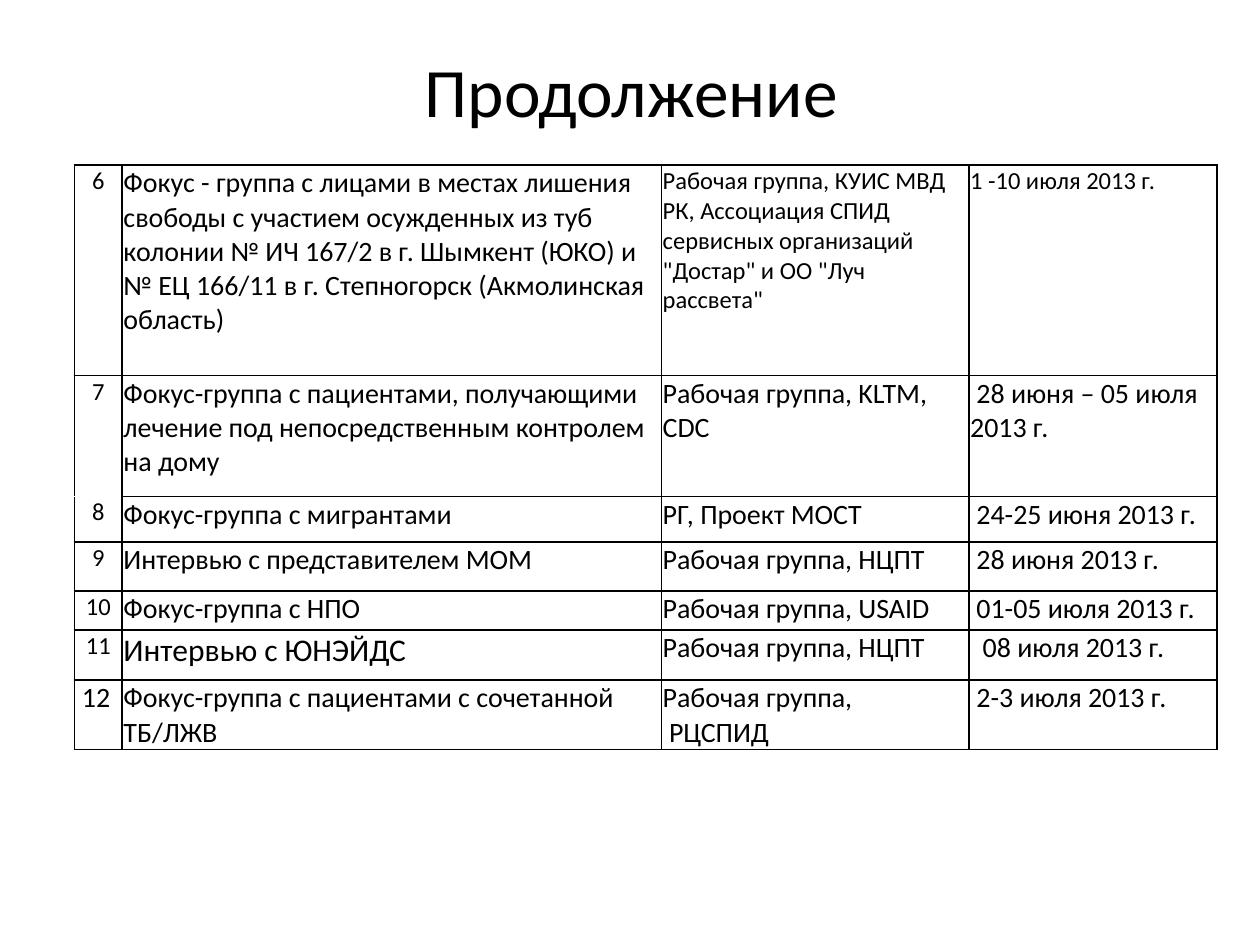
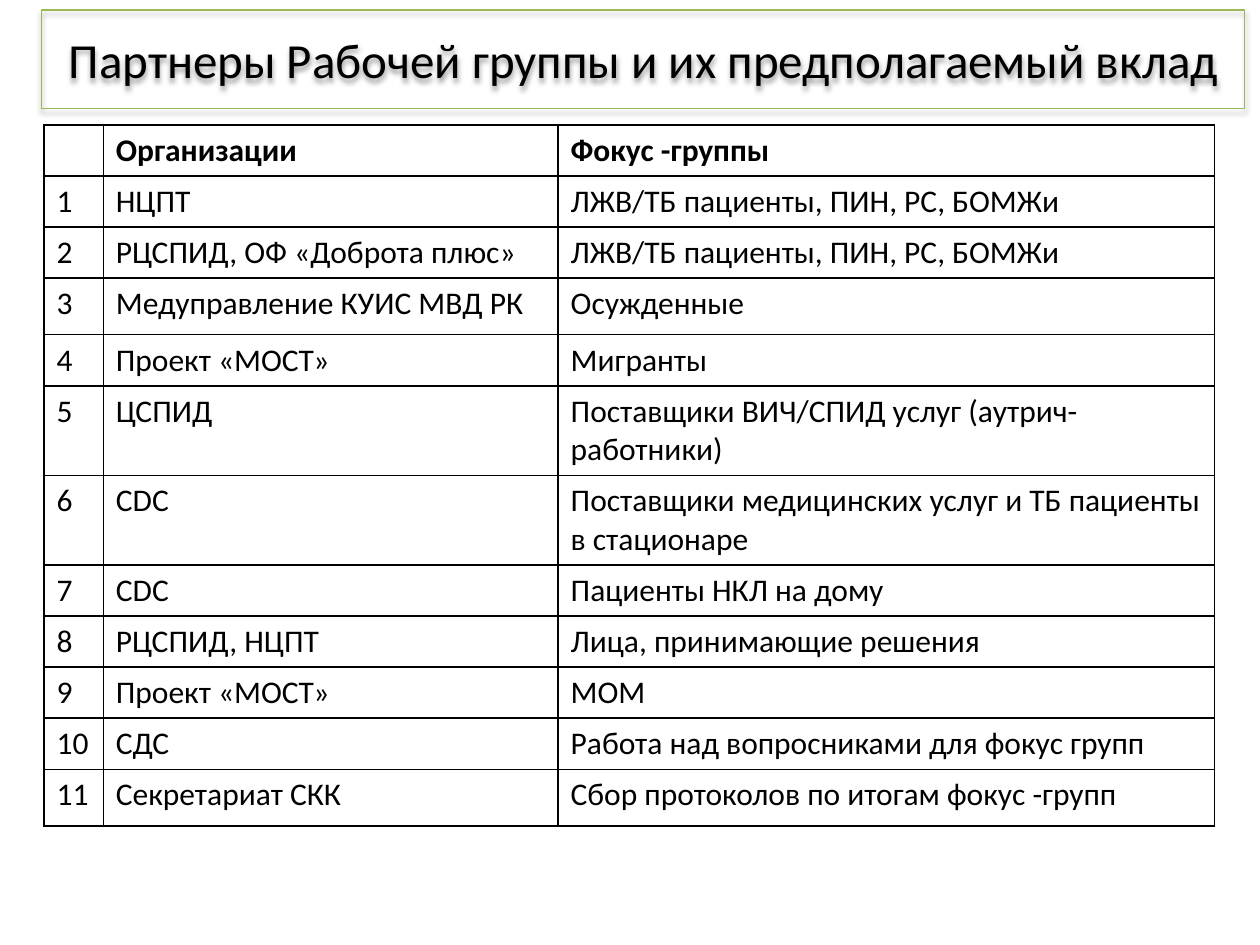
import pptx
import pptx.util
import pptx.dml.color
import pptx.enum.text
import pptx.oxml
import pptx.oxml.ns

RGBColor = pptx.dml.color.RGBColor
BLACK = RGBColor(0x00, 0x00, 0x00)
WHITE = RGBColor(0xFF, 0xFF, 0xFF)
GREEN = RGBColor(0x98, 0xB9, 0x55)
ALIGN = pptx.enum.text.PP_ALIGN
SPACE = pptx.oxml.ns.nsdecls("a")
SIDES = "LRTB"


class Deck:
    font = {"name": "Calibri", "bold": False}

    def __init__(self):
        self.file = pptx.Presentation()
        self.file.slide_width = pptx.util.Inches(10)
        self.file.slide_height = pptx.util.Inches(7.5)
        self.slide = None

    def across(self, share):
        return round(self.file.slide_width * share / 100)

    def down(self, share):
        return round(self.file.slide_height * share / 100)

    def place(self, left, top, width, height):
        return self.across(left), self.down(top), self.across(width), self.down(height)

    def add(self):
        self.slide = self.file.slides.add_slide(self.file.slide_layouts[5])

    def style(self, frame, size, align, **more):
        for para in frame.paragraphs:
            para.alignment = align
            form = {**self.font, "size": pptx.util.Pt(size), **more}
            for part in para.runs:
                for key, value in form.items():
                    setattr(part.font, key, value)
                part.font.color.rgb = BLACK

    def title(self, text, box, size):
        shape = self.slide.shapes.title
        for key, value in zip(("left", "top", "width", "height"), self.place(*box)):
            setattr(shape, key, value)
        frame = shape.text_frame
        frame.text = text
        form = {"word_wrap": True,
                "auto_size": pptx.enum.text.MSO_AUTO_SIZE.NONE,
                "vertical_anchor": pptx.enum.text.MSO_ANCHOR.MIDDLE}
        for key, value in form.items():
            setattr(frame, key, value)
        self.style(frame, size, ALIGN.CENTER)
        return shape

    def frame(self, shape):
        shape.fill.background()
        shape.line.color.rgb = GREEN
        shape.line.width = pptx.util.Pt(0.75)
        shape.element.spPr.append(pptx.oxml.parse_xml(
            f'<a:effectLst {SPACE}><a:outerShdw blurRad="40000" dist="20000" '
            f'dir="5400000" rotWithShape="0"><a:srgbClr val="{BLACK}">'
            '<a:alpha val="38000"/></a:srgbClr></a:outerShdw></a:effectLst>'))

    def edge(self, cell, tints):
        props = cell._tc.get_or_add_tcPr()
        for spot, side in enumerate(SIDES):
            props.insert(spot, pptx.oxml.parse_xml(
                f'<a:ln{side} {SPACE} w="12700"><a:solidFill>'
                f'<a:srgbClr val="{tints.get(side, BLACK)}"/></a:solidFill></a:ln{side}>'))

    def table(self, rows, spot, wide, high, pads, look, tints):
        box = self.place(*spot, sum(wide), sum(high))
        grid = self.slide.shapes.add_table(len(high), len(wide), *box).table
        grid.first_row = grid.horz_banding = False
        for col, share in zip(grid.columns, wide):
            col.width = self.across(share)
        for line, share in zip(grid.rows, high):
            line.height = self.down(share)
        side, top, base = pads
        form = {"margin_left": self.across(side), "margin_right": self.across(side),
                "margin_top": self.down(top), "margin_bottom": self.down(base)}
        for r, row in enumerate(rows):
            for c, text in enumerate(row):
                cell = grid.cell(r, c)
                cell.text = text
                for key, value in form.items():
                    setattr(cell, key, value)
                cell.fill.solid()
                cell.fill.fore_color.rgb = WHITE
                self.style(cell.text_frame, **look(r, c))
                self.edge(cell, tints.get((r, c), {}))
        return grid


TASKS = [
    ("6", "Фокус - группа с лицами в местах лишения свободы с участием осужденных "
     "из туб колонии № ИЧ 167/2 в г. Шымкент (ЮКО) и № ЕЦ 166/11 в г. Степногорск "
     "(Акмолинская область)",
     'Рабочая группа, КУИС МВД РК, Ассоциация СПИД сервисных организаций "Достар" '
     'и ОО "Луч рассвета"', "1 -10 июля 2013 г."),
    ("7", "Фокус-группа с пациентами, получающими лечение под непосредственным "
     "контролем на дому", "Рабочая группа, KLTM, CDC", " 28 июня – 05 июля 2013 г."),
    ("8", "Фокус-группа с мигрантами", "РГ, Проект МОСТ", " 24-25 июня 2013 г."),
    ("9", "Интервью с представителем МОМ", "Рабочая группа, НЦПТ", " 28 июня 2013 г."),
    ("10", "Фокус-группа с НПО", "Рабочая группа, USAID", " 01-05 июля 2013 г."),
    ("11", "Интервью с ЮНЭЙДС", "Рабочая группа, НЦПТ", " 08 июля 2013 г."),
    (" 12", "Фокус-группа с пациентами с сочетанной ТБ/ЛЖВ",
     "Рабочая группа,\n РЦСПИД", " 2-3 июля 2013 г."),
]

GROUPS = [
    ("Организации", "Фокус -группы"),
    ("НЦПТ", "ЛЖВ/ТБ пациенты, ПИН, РС, БОМЖи"),
    ("РЦСПИД, ОФ «Доброта плюс»", "ЛЖВ/ТБ пациенты, ПИН, РС, БОМЖи"),
    ("Медуправление КУИС МВД РК", "Осужденные"),
    ("Проект «МОСТ»", "Мигранты"),
    ("ЦСПИД", "Поставщики ВИЧ/СПИД услуг (аутрич-работники)"),
    ("CDC", "Поставщики медицинских услуг и ТБ пациенты в стационаре"),
    ("CDC", "Пациенты НКЛ на дому"),
    ("РЦСПИД, НЦПТ", "Лица, принимающие решения"),
    ("Проект «МОСТ»", "МОМ"),
    ("СДС", "Работа над вопросниками для фокус групп"),
    ("Секретариат СКК", "Сбор протоколов по итогам фокус -групп"),
]


def task_look(r, c):
    last = len(TASKS) - 1
    small = (c == 0 and r < last) or (r == 0 and c > 1)
    size = 14 if small else 18 if (r, c) == (5, 1) else 16
    return {"size": size, "align": ALIGN.CENTER if c == 0 and r < last else ALIGN.LEFT}


def group_look(r, c):
    return {"size": 18, "align": ALIGN.LEFT, "bold": r == 0}


def main():
    deck = Deck()

    deck.add()
    deck.title("Продолжение", (5.1, 6.93, 90, 5.07), 39.6)
    tasks = deck.table(TASKS, (5.9, 17.47), (3.8, 42.8, 24.4, 19.7),
                       (22.27, 12.8, 4.8, 5.2, 4.13, 5.3, 7.33), (0.1, 0.13, 0),
                       task_look, {(1, 0): {"B": WHITE}, (2, 0): {"T": WHITE}})
    tasks.cell(5, 3).margin_left = deck.across(0.6)

    deck.add()
    deck.frame(deck.title("Партнеры Рабочей группы и их предполагаемый вклад",
                          (3.3, 1.07, 95.5, 10.4), 28))
    rows = [(str(n) if n else "", *row) for n, row in enumerate(GROUPS)]
    one, two, tall = 5.4, 9.4, 6
    high = [tall if n in (3, 11) else two if n in (5, 6) else one
            for n in range(len(rows))]
    deck.table(rows, (3.5, 13.2), (4.7, 36.1, 52.1), high, (1, 0.67, 0.67),
               group_look, {})

    deck.file.save("out.pptx")


if __name__ == "__main__":
    main()
